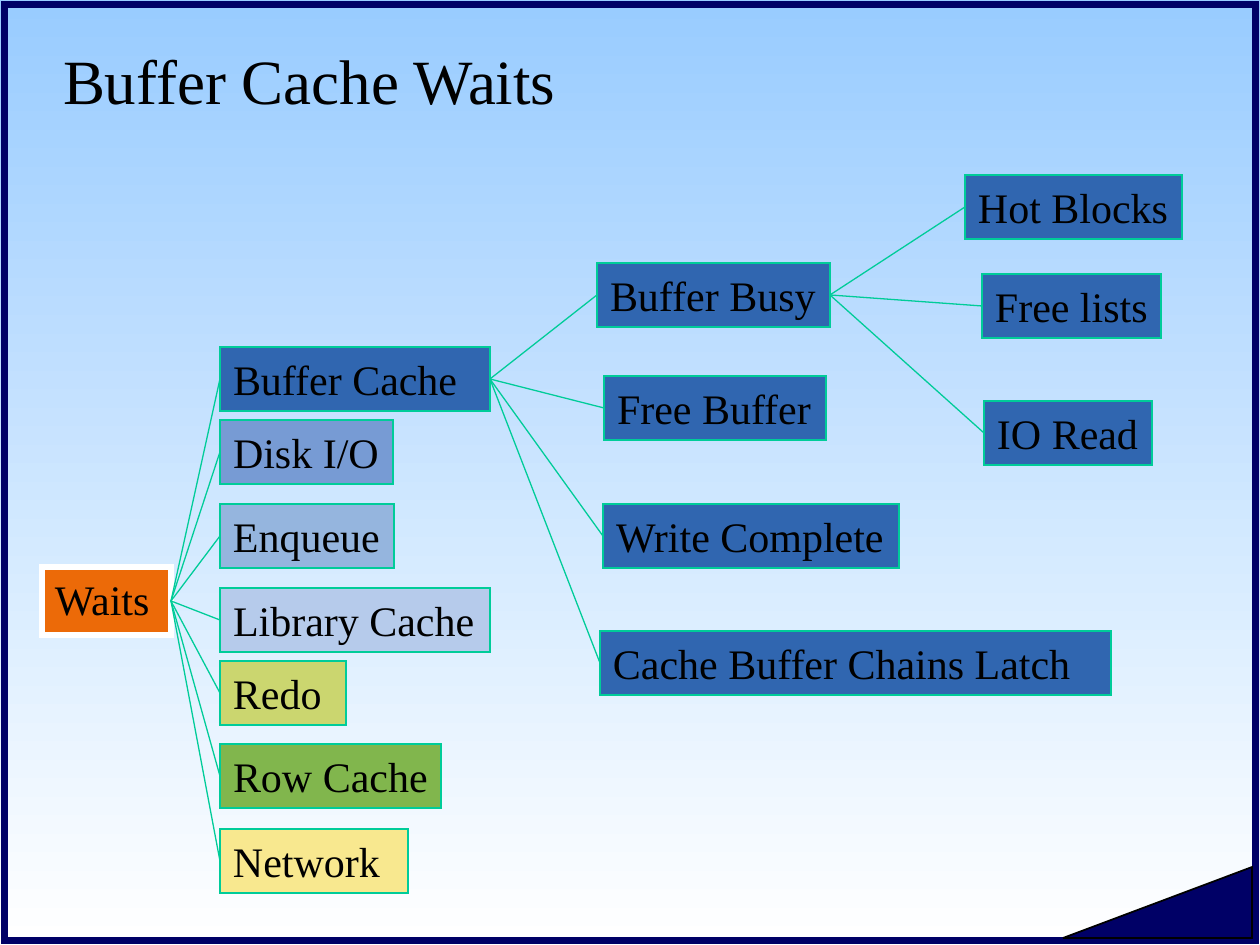
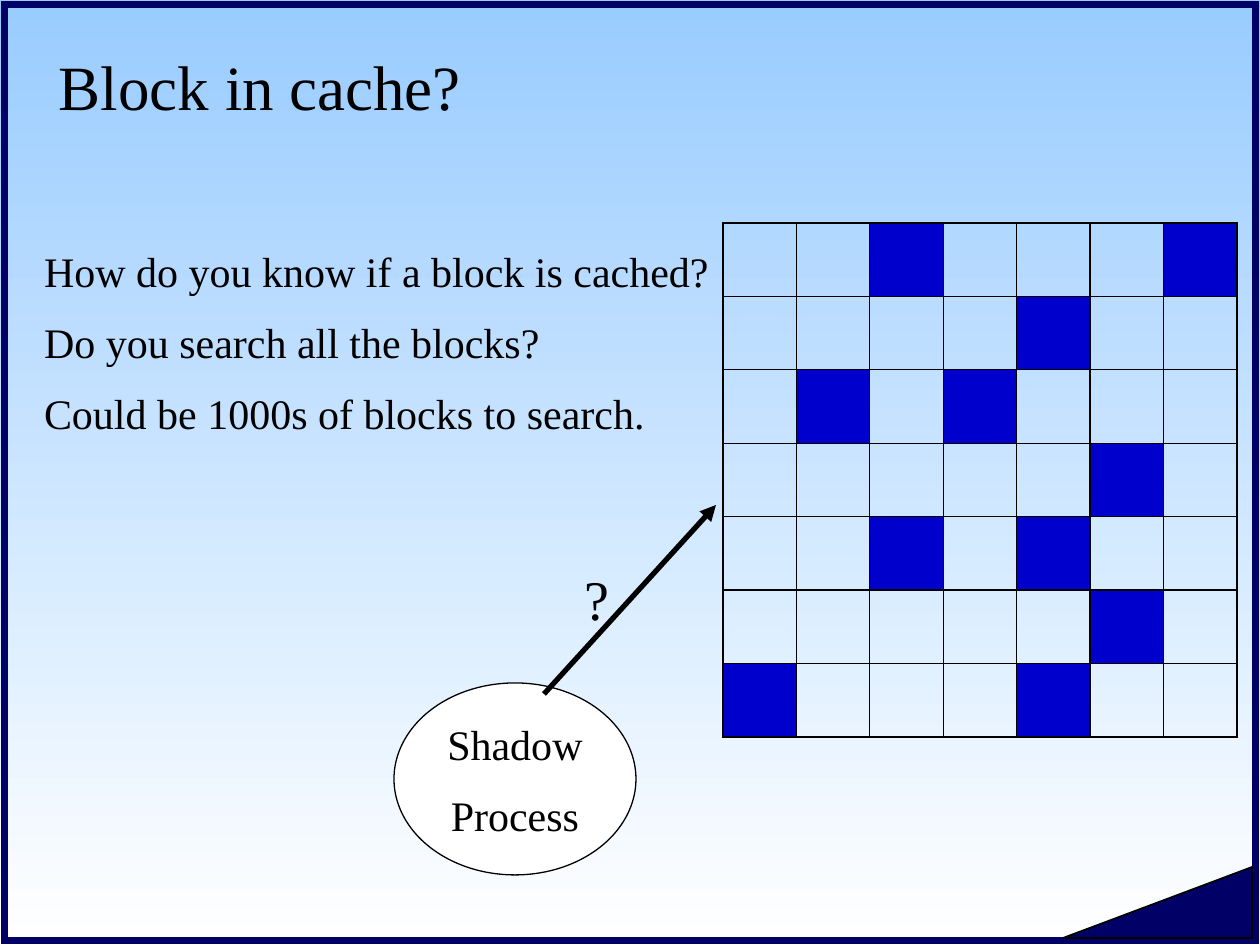
from pptx import Presentation
from pptx.dml.color import RGBColor
from pptx.enum.shapes import MSO_CONNECTOR as Link, MSO_SHAPE as Kind
from pptx.enum.text import MSO_ANCHOR as Anchor, MSO_AUTO_SIZE as Fit, PP_ALIGN as Align
from pptx.oxml.ns import qn
from pptx.util import Emu, Pt
from lxml.etree import SubElement as add_tag

SCALE = 914400 / 126
WIDE, HIGH = 1260, 945
FONT = "Times New Roman"
BLACK, WHITE, NAVY = "000000", "FFFFFF", "000066"
SKY, GREEN, BLUE, STEEL = "99CCFF", "00CC99", "0000CC", "3066B0"
ROW = 64

WAITS = [
    ("Buffer Cache", 178, 172, 270, STEEL),
    ("Disk I/O", 178, 245, 173, "779BD4"),
    ("Enqueue", 178, 329, 174, "95B5DE"),
    ("Library Cache", 178, 413, 270, "B6CBEB"),
    ("Redo", 178, 486, 126, "CBD66F"),
    ("Row Cache", 178, 569, 221, "81B64D"),
    ("Network", 178, 654, 188, "F8E88F"),
]
CACHE = [
    ("Buffer Busy", 555, 88, 233, STEEL),
    ("Free Buffer", 562, 201, 222, STEEL),
    ("Write Complete", 561, 329, 296, STEEL),
    ("Cache Buffer Chains Latch", 558, 456, 511, STEEL),
]
BUSY = [
    ("Hot Blocks", 923, 0, 217, STEEL),
    ("Free lists", 940, 99, 179, STEEL),
    ("IO Read", 942, 226, 168, STEEL),
]
BLOCKS = [
    "..#...#",
    "....#..",
    ".#.#...",
    ".....#.",
    "..#.#..",
    ".....#.",
    "#...#..",
]


def px(*sizes):
    return [Emu(round(size * SCALE)) for size in sizes]


def rgb(code):
    return RGBColor.from_string(code)


def place(shape, box):
    shape.left, shape.top, shape.width, shape.height = px(*box)


def write(shape, text, size=24, color=BLACK, align=Align.LEFT, anchor=Anchor.TOP, gap=0, right=13):
    frame = shape.text_frame
    frame.word_wrap = True
    frame.auto_size = Fit.NONE
    frame.vertical_anchor = anchor
    frame.margin_left, frame.margin_right = px(13, right)
    frame.margin_top, frame.margin_bottom = px(6, 6)
    frame.text = text
    for order, para in enumerate(frame.paragraphs):
        para.alignment = align
        para.space_before = Pt(gap if order else 0)
        para.font.size = Pt(size)
        para.font.name = FONT
        para.font.color.rgb = rgb(color)


def draw(shapes, kind, box, fill=None, line=BLACK, width=0.75):
    shape = shapes.add_shape(kind, *px(*box))
    shape.shadow.inherit = False
    if fill:
        shape.fill.solid()
        shape.fill.fore_color.rgb = rgb(fill)
    else:
        shape.fill.background()
    shape.line.color.rgb = rgb(line)
    shape.line.width = Pt(width)
    add_tag(shape.line._get_or_add_ln(), qn("a:miter"), lim="800000")
    return shape


def join(slide, ends, color, width):
    line = slide.shapes.add_connector(Link.STRAIGHT, *px(*ends))
    line.line.color.rgb = rgb(color)
    line.line.width = Pt(width)
    add_tag(line._element.spPr, qn("a:effectLst"))
    return line


def paint(master):
    fill = master.background.fill
    fill.gradient()
    fill.gradient_angle = 270
    for stop, code in zip(fill.gradient_stops, (SKY, WHITE)):
        stop.color.rgb = rgb(code)


def start(deck, layout, title, box):
    slide = deck.slides.add_slide(deck.slide_layouts[layout])
    draw(slide.shapes, Kind.RECTANGLE, (4, 4, WIDE - 8, HIGH - 8), line=NAVY, width=4)
    corner = draw(slide.shapes, Kind.ISOSCELES_TRIANGLE, (1063, 867, 189, 71), NAVY, width=1)
    corner.adjustments[0] = 1
    place(slide.shapes.title, box)
    write(slide.shapes.title, title, size=36, anchor=Anchor.MIDDLE)
    return slide


def branch(slide, root, nodes, left, top):
    kids = []
    for name, x, y, wide, fill in nodes:
        kid = draw(slide.shapes, Kind.RECTANGLE, (left + x, top + y, wide, ROW), fill, GREEN)
        write(kid, name, anchor=Anchor.MIDDLE, right=0)
        line = join(slide, (0, 0, 0, 0), GREEN, 0.75)
        line.begin_connect(kid, 1)
        line.end_connect(root, 3)
        kids.append(kid)
    return kids


def tree(slide, left, top):
    root = draw(slide.shapes, Kind.RECTANGLE, (left, top + 392, 129, 68), "EC6A08", WHITE, 3)
    write(root, "Waits", right=0)
    cache = branch(slide, root, WAITS, left, top)[0]
    busy = branch(slide, cache, CACHE, left, top)[0]
    branch(slide, busy, BUSY, left, top)


def grid(slide, left, top, side):
    shapes = slide.shapes.add_group_shape().shapes
    count = len(BLOCKS)
    cell = side / count
    for n in range(count):
        draw(shapes, Kind.RECTANGLE, (left, top + n * cell, side, cell))
    for n in range(count):
        draw(shapes, Kind.RECTANGLE, (left + n * cell, top, cell, side))
    for y, row in enumerate(BLOCKS):
        for x, mark in enumerate(row):
            if mark == "#":
                draw(shapes, Kind.RECTANGLE, (left + x * cell, top + y * cell, cell, cell), BLUE)


def asks(slide, box):
    body = slide.placeholders[1]
    place(body, box)
    write(body, "How do you know if a block is cached?\n"
                "Do you search all the blocks?\n"
                "Could be 1000s of blocks to search.", gap=12)
    for para in body.text_frame.paragraphs:
        props = para._p.get_or_add_pPr()
        props.set("marL", "0")
        props.set("indent", "0")
        add_tag(props, qn("a:buNone"))


def search(slide, left, top):
    oval = draw(slide.shapes, Kind.OVAL, (left, top + 178, 242, 192), WHITE)
    write(oval, "Shadow\nProcess", align=Align.CENTER, anchor=Anchor.MIDDLE, gap=12)
    arrow = join(slide, (left + 150, top + 189, left + 322, top), BLACK, 3)
    add_tag(arrow.line._get_or_add_ln(), qn("a:tailEnd"), type="triangle")
    mark = slide.shapes.add_textbox(*px(left + 178, top + 53, 52, 79))
    write(mark, "?", size=32)


def main():
    deck = Presentation()
    deck.slide_width, deck.slide_height = px(WIDE, HIGH)
    paint(deck.slide_master)

    waits = start(deck, 5, "Buffer Cache Waits", (50, 0, 1071, 158))
    tree(waits, 42, 175)

    block = start(deck, 1, "Block in cache?", (46, 34, 1105, 103))
    grid(block, 723, 223, 514)
    asks(block, (31, 239, 721, 214))
    search(block, 394, 505)

    deck.save("out.pptx")


if __name__ == "__main__":
    main()
